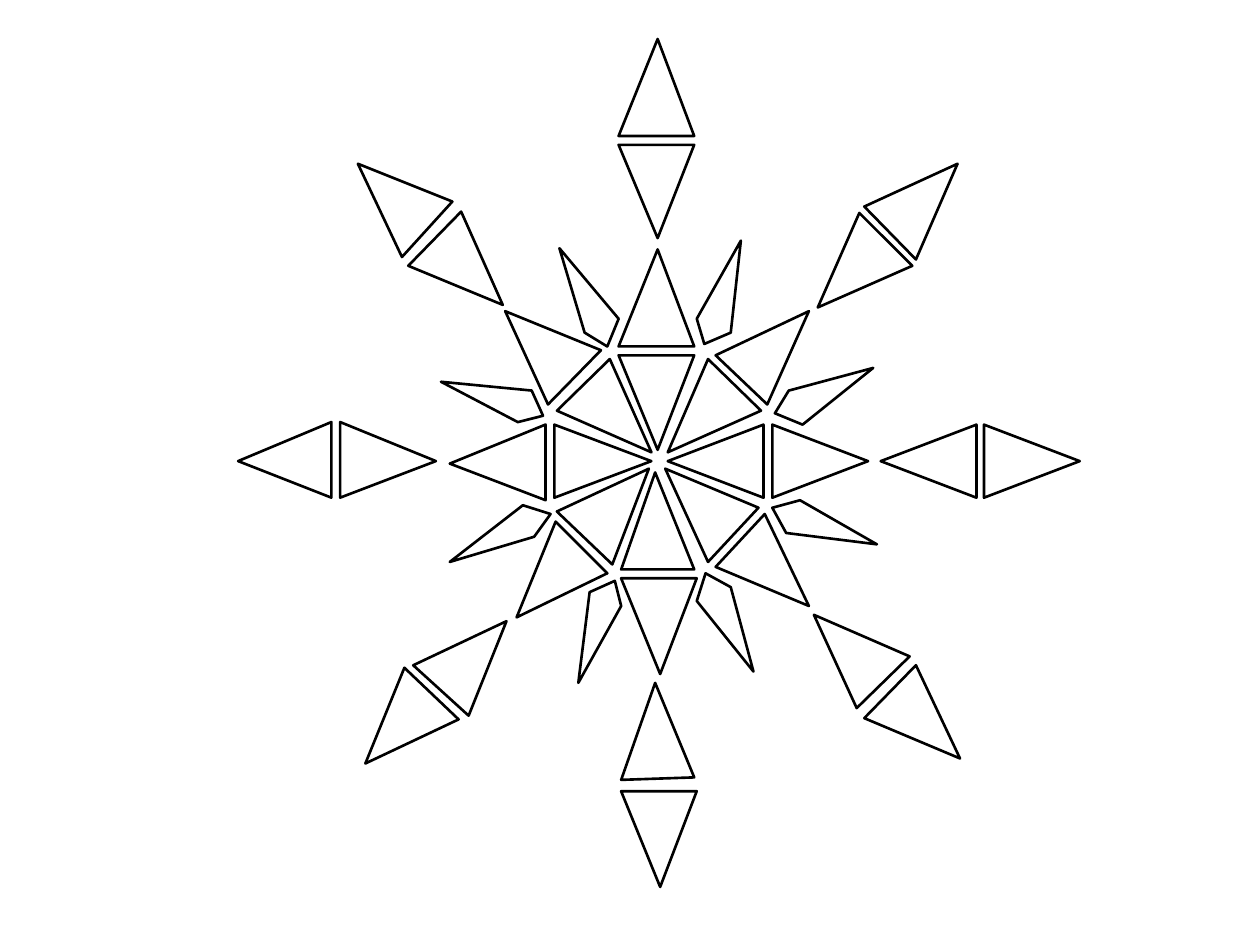
import pptx
import pptx.util
import pptx.dml.color
from pptx.util import Pt

BLACK = pptx.dml.color.RGBColor(0, 0, 0)
WHITE = pptx.dml.color.RGBColor(255, 255, 255)
UNIT = Pt(0.72)  # drawing grid: 1000 x 750 units on the slide

prs = pptx.Presentation()
prs.slide_width, prs.slide_height = Pt(720), Pt(540)
s = prs.slides.add_slide(prs.slide_layouts[6])
snowflake = s.shapes.add_group_shape()


def add_outline(points):
    builder = snowflake.shapes.build_freeform(*points[0], scale=UNIT)
    builder.add_line_segments(points[1:], close=True)
    sp = builder.convert_to_shape()
    sp.shadow.inherit = False
    sp.fill.solid()
    sp.fill.fore_color.rgb = WHITE
    sp.line.color.rgb = BLACK
    sp.line.width = Pt(1.5)


# Vertical arms: tip x, tip y, base y, base left, base right
vertical_arms = [
    (522, 31, 108, 491, 551), (522, 189, 115, 491, 551),
    (522, 198, 275, 491, 551), (522, 357, 282, 491, 551),
    (520, 375, 452, 493, 551), (524, 535, 459, 493, 553),
    (524, 704, 628, 493, 553),
]
for tip_x, tip_y, base_y, left, right in vertical_arms:
    add_outline([(tip_x, tip_y), (left, base_y), (right, base_y)])

# Horizontal arms: tip x, tip y, base x, base top, base bottom
horizontal_arms = [
    (189, 366, 263, 335, 395), (346, 366, 270, 335, 395),
    (357, 368, 433, 337, 397), (517, 366, 440, 337, 395),
    (530, 366, 606, 337, 395), (689, 366, 613, 337, 395),
    (699, 366, 775, 337, 395), (857, 366, 781, 337, 395),
]
for tip_x, tip_y, base_x, top, bottom in horizontal_arms:
    add_outline([(tip_x, tip_y), (base_x, top), (base_x, bottom)])

# Hand-drawn pieces: the tip first, then the base corners
slanted_triangles = [
    # lower vertical arm, with an uneven base
    [(520, 542), (551, 617), (493, 619)],
    # upper right arm, from the centre outwards
    [(530, 359), (562, 285), (604, 326)],
    [(642, 247), (609, 321), (568, 282)],
    [(649, 244), (682, 169), (724, 211)],
    [(760, 130), (727, 206), (686, 164)],
    # lower right arm
    [(528, 372), (602, 403), (562, 446)],
    [(642, 481), (568, 450), (607, 408)],
    [(646, 488), (722, 521), (680, 562)],
    [(762, 602), (686, 570), (727, 528)],
    # lower left arm
    [(515, 372), (486, 448), (442, 406)],
    [(410, 490), (441, 414), (482, 455)],
    [(402, 493), (372, 568), (328, 528)],
    [(290, 606), (321, 530), (364, 571)],
    # upper left arm
    [(517, 359), (484, 285), (442, 326)],
    [(401, 247), (477, 278), (435, 321)],
    [(399, 242), (324, 211), (366, 168)],
    [(284, 130), (359, 160), (319, 204)],
]
# Petals between the arms, clockwise from the top right: inner point first
petals = [
    [(559, 273), (553, 253), (588, 191), (580, 264)],
    [(615, 328), (626, 310), (693, 292), (637, 337)],
    [(613, 403), (635, 397), (696, 432), (624, 423)],
    [(560, 455), (580, 466), (598, 533), (553, 477)],
    [(488, 461), (493, 481), (459, 542), (468, 470)],
    [(437, 408), (424, 426), (357, 446), (415, 401)],
    [(431, 330), (411, 335), (350, 303), (422, 310)],
    [(482, 275), (464, 264), (444, 197), (491, 253)],
]
for points in slanted_triangles + petals:
    add_outline(points)

prs.save("out.pptx")
